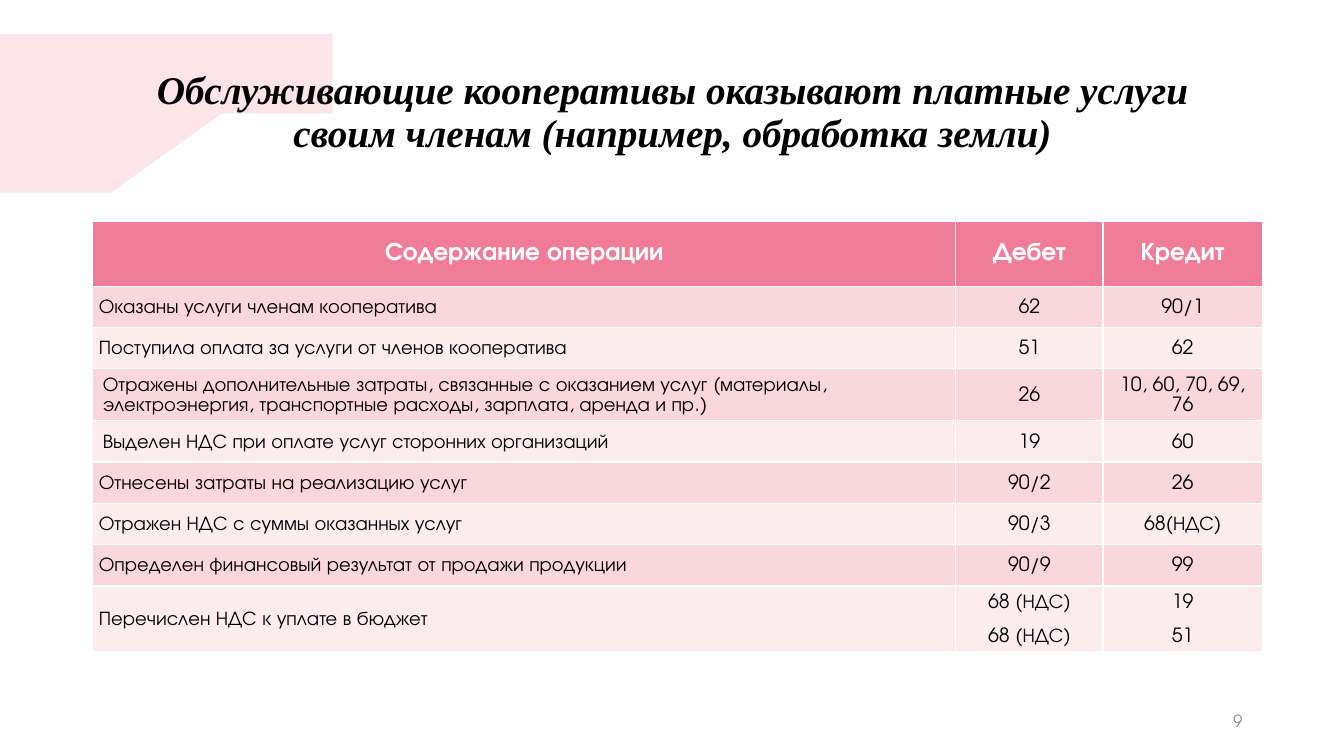
"""Build a slide with a table of accounting entries for service cooperatives."""
import dataclasses

import pptx
import pptx.dml.color
import pptx.enum.text
import pptx.oxml.ns
import pptx.util
from lxml import etree

Inches = pptx.util.Inches
Pt = pptx.util.Pt
Align = pptx.enum.text.PP_ALIGN
MIDDLE = pptx.enum.text.MSO_ANCHOR.MIDDLE


@dataclasses.dataclass(frozen=True)
class Theme:
    """Colours, fonts and type sizes of the slide."""

    rose: str = "F07C98"
    bands: tuple = ("F9D7DD", "FCECEF")
    white: str = "FFFFFF"
    black: str = "000000"
    grey: str = "8C8C8C"
    title_font: str = "Times New Roman"
    body_font: str = "TeX Gyre Adventor"
    title_size: int = 28
    header_size: int = 18
    entry_size: int = 14
    number_size: int = 12


@dataclasses.dataclass(frozen=True)
class Box:
    """A region of the slide in inches."""

    left: float
    top: float
    width: float
    height: float

    def lengths(self):
        """Return the four measures as lengths."""
        return [Inches(side) for side in dataclasses.astuple(self)]


THEME = Theme()
TITLE = ("Обслуживающие кооперативы оказывают платные услуги "
         "своим членам (например, обработка земли)")
HEADINGS = ("Содержание операции", "Дебет", "Кредит")
NARROW, WIDE = 0.06, 0.1
ENTRIES = [
    (NARROW, "Оказаны услуги членам кооператива", "62", "90/1"),
    (NARROW, "Поступила оплата за услуги от членов кооператива", "51", "62"),
    (WIDE, "Отражены дополнительные затраты, связанные с оказанием услуг (материалы, "
           "электроэнергия, транспортные расходы, зарплата, аренда и пр.)",
     "26", "10, 60, 70, 69, 76"),
    (WIDE, "Выделен НДС при оплате услуг сторонних организаций", "19", "60"),
    (NARROW, "Отнесены затраты на реализацию услуг", "90/2", "26"),
    (NARROW, "Отражен НДС с суммы оказанных услуг", "90/3", "68(НДС)"),
    (NARROW, "Определен финансовый результат от продажи продукции", "90/9", "99"),
    (NARROW, "Перечислен НДС к уплате в бюджет", "68 (НДС)\n68 (НДС)", "19\n51"),
]
COLUMN_WIDTHS = (8.56, 1.46, 1.58)
HEADER_HEIGHT, ENTRY_HEIGHT = 0.64, 0.41

BRUSH_OUTLINE = [
    (0, 0), (0.25, 0.03), (0.8, 0.04), (1.3, 0.03), (1.94, 0.07), (2.7, 0.07),
    (2.8, 0.13), (2.53, 0.23), (2.62, 0.28), (2.38, 0.32), (2.75, 0.4),
    (2.51, 0.41), (2.9, 0.51), (2.63, 0.54), (3.3, 0.6), (3.18, 0.72),
    (2.83, 0.82), (2.74, 0.94), (3.08, 0.94), (2.69, 1.04), (2.73, 1.08),
    (2.52, 1.14), (2.63, 1.14), (1.97, 1.38), (1.02, 1.54), (0.65, 1.57), (0, 1.54),
]


def rgb(colour):
    """Turn a hex string into a colour."""
    return pptx.dml.color.RGBColor.from_string(colour)


def style_paragraph(paragraph, font, size, colour, align, bold=False, italic=False):
    """Set the alignment and font of one paragraph."""
    paragraph.alignment = align
    paragraph.font.name = font
    paragraph.font.size = Pt(size)
    paragraph.font.color.rgb = rgb(colour)
    paragraph.font.bold = bold
    paragraph.font.italic = italic


def add_brush_stroke(slide, box):
    """Paint the translucent brush stroke behind everything else."""
    outline = slide.shapes.build_freeform(scale=Inches(1))
    outline.add_line_segments(BRUSH_OUTLINE[1:], close=True)
    stroke = outline.convert_to_shape(Inches(box.left), Inches(box.top))
    stroke.width, stroke.height = Inches(box.width), Inches(box.height)
    stroke.shadow.inherit = False
    stroke.line.fill.background()
    stroke.fill.solid()
    stroke.fill.fore_color.rgb = rgb(THEME.rose)
    tint = stroke._element.spPr.find(".//" + pptx.oxml.ns.qn("a:srgbClr"))
    etree.SubElement(tint, pptx.oxml.ns.qn("a:alpha"), val="20000")
    slide.shapes._spTree.insert(2, stroke._element)


def add_title(slide, box):
    """Fill and place the title."""
    title = slide.shapes.title
    title.left, title.top, title.width, title.height = box.lengths()
    title.text_frame.text = TITLE
    title.text_frame.word_wrap = True
    title.text_frame.vertical_anchor = MIDDLE
    heading = title.text_frame.paragraphs[0]
    heading.line_spacing = 0.9
    style_paragraph(heading, THEME.title_font, THEME.title_size, THEME.black,
                    Align.CENTER, bold=True, italic=True)


def fill_cell(cell, text, fill, margin, size, colour, align, bold=False):
    """Write and format one table cell."""
    cell.text = text
    cell.fill.solid()
    cell.fill.fore_color.rgb = rgb(fill)
    cell.vertical_anchor = MIDDLE
    cell.margin_left = cell.margin_right = Inches(margin)
    for paragraph in cell.text_frame.paragraphs:
        style_paragraph(paragraph, THEME.body_font, size, colour, align, bold)


def add_entries_table(slide, box):
    """Place the table of entries with its debit and credit accounts."""
    entries = slide.shapes.add_table(len(ENTRIES) + 1, len(HEADINGS), *box.lengths()).table
    for column, width in zip(entries.columns, COLUMN_WIDTHS):
        column.width = Inches(width)
    for index, row in enumerate(entries.rows):
        row.height = Inches(ENTRY_HEIGHT if index else HEADER_HEIGHT)
    for column, heading in enumerate(HEADINGS):
        fill_cell(entries.cell(0, column), heading, THEME.rose, WIDE,
                  THEME.header_size, THEME.white, Align.CENTER, bold=True)
    for index, (margin, *texts) in enumerate(ENTRIES):
        for column, text in enumerate(texts):
            cell = entries.cell(index + 1, column)
            fill_cell(cell, text, THEME.bands[index % 2], margin, THEME.entry_size,
                      THEME.black, Align.CENTER if column else Align.LEFT)
            for paragraph in cell.text_frame.paragraphs:
                paragraph.line_spacing = 1.15
                paragraph.space_after = Pt(10)


def add_page_number(slide, box):
    """Place the page number."""
    number = slide.shapes.add_textbox(*box.lengths()).text_frame
    number.text = "9"
    number.word_wrap = True
    number.vertical_anchor = MIDDLE
    style_paragraph(number.paragraphs[0], THEME.body_font, THEME.number_size,
                    THEME.grey, Align.RIGHT)


def main():
    """Build and save the presentation."""
    deck = pptx.Presentation()
    deck.slide_width, deck.slide_height = Inches(13.33), Inches(7.5)
    slide = deck.slides.add_slide(deck.slide_layouts.get_by_name("Title Only"))
    add_brush_stroke(slide, Box(0, 0.34, 3.3, 1.57))
    add_title(slide, Box(0.92, 0.4, 11.5, 1.45))
    add_entries_table(slide, Box(0.92, 2.2, sum(COLUMN_WIDTHS),
                                 HEADER_HEIGHT + ENTRY_HEIGHT * len(ENTRIES)))
    add_page_number(slide, Box(9.42, 6.95, 3, 0.4))
    deck.save("out.pptx")


if __name__ == "__main__":
    main()
